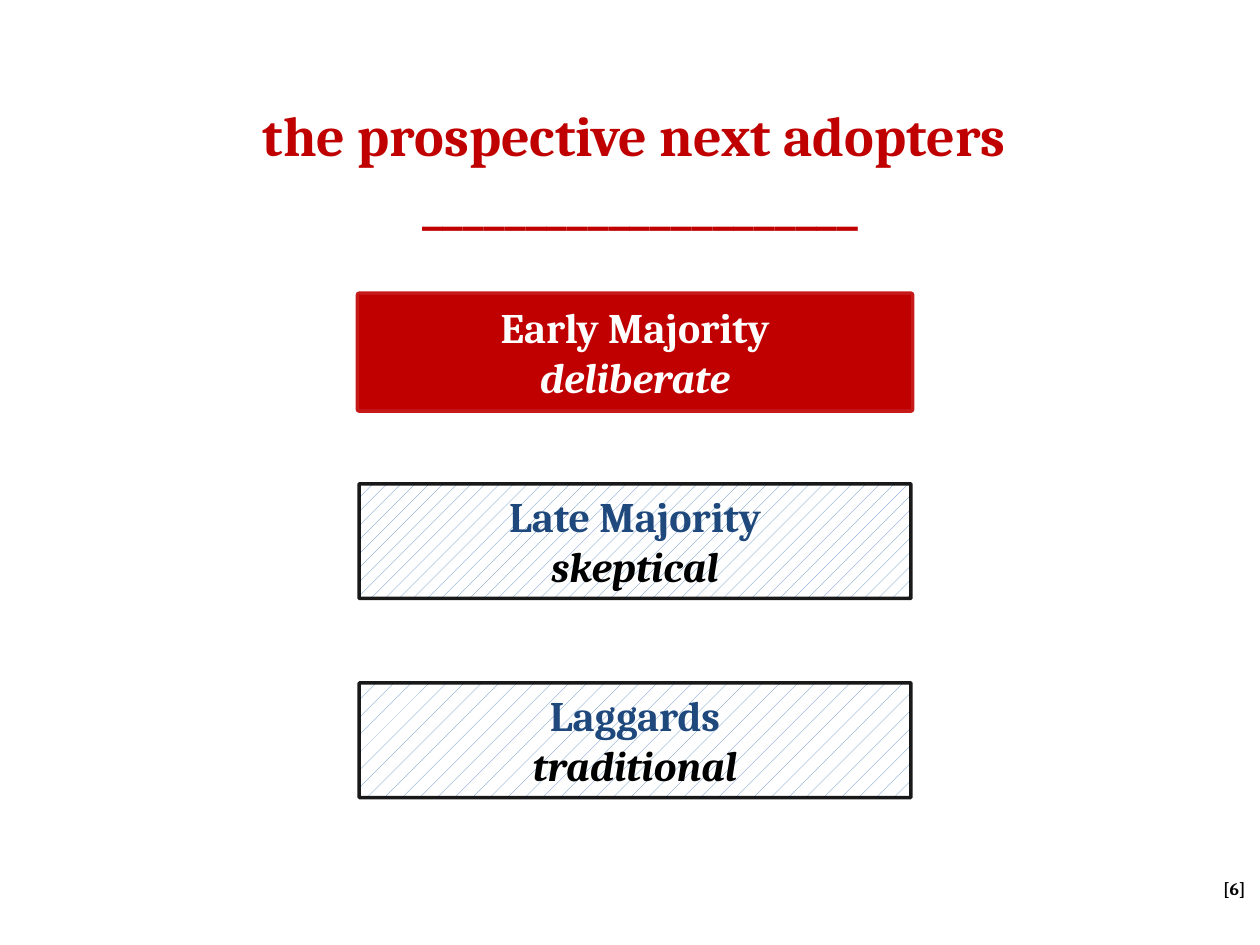
"""Build the slide that lists the prospective next adopter groups."""
import pptx
import pptx.dml.color
import pptx.enum.dml
import pptx.enum.shapes
import pptx.enum.text
import pptx.oxml
import pptx.oxml.ns
import pptx.util

WIDTH, HEIGHT = 10, 7.5
FONT = "Cambria"
RED, NAVY, BLUE, BLACK, WHITE = "C00000", "1F497D", "4F81BD", "000000", "FFFFFF"
BOX_LEFT, BOX_WIDTH, BOX_HEIGHT = 0.285 * WIDTH, 0.438 * WIDTH, 0.91
PATTERN = pptx.enum.dml.MSO_PATTERN
CENTER = pptx.enum.text.PP_ALIGN.CENTER
LEFT = pptx.enum.text.PP_ALIGN.LEFT


def color(value):
    """Return the colour for a hex string."""
    return pptx.dml.color.RGBColor.from_string(value)


def place(shape, left, top, width, height):
    """Set the position and size of a shape in inches."""
    shape.left, shape.top, shape.width, shape.height = (
        pptx.util.Inches(length) for length in (left, top, width, height))


def write_lines(shape, lines, size, alignment=CENTER, wrap=True):
    """Write bold lines, each given as text, colour and italic flag."""
    frame = shape.text_frame
    frame.word_wrap = wrap
    frame.auto_size = pptx.enum.text.MSO_AUTO_SIZE.SHAPE_TO_FIT_TEXT
    frame.vertical_anchor = pptx.enum.text.MSO_ANCHOR.TOP
    for index, (text, text_color, italic) in enumerate(lines):
        paragraph = frame.add_paragraph() if index else frame.paragraphs[0]
        paragraph.alignment = alignment
        run = paragraph.add_run()
        run.text = text
        run.font.name = FONT
        run.font.size = pptx.util.Pt(size)
        run.font.bold = True
        run.font.italic = italic
        run.font.color.rgb = color(text_color)


def fill_box(shape, fill_color, pattern):
    """Fill a shape with a plain colour, or with a pattern on white."""
    if pattern is None:
        shape.fill.solid()
        shape.fill.fore_color.rgb = color(fill_color)
    else:
        shape.fill.patterned()
        shape.fill.pattern = pattern
        shape.fill.fore_color.rgb = color(fill_color)
        shape.fill.back_color.rgb = color(WHITE)


def outline_box(shape, line_color, width):
    """Draw a slightly transparent outline around a shape."""
    shape.line.color.rgb = color(line_color)
    shape.line.width = pptx.util.Pt(width)
    line_fill = shape.line._get_or_add_ln().find(
        ".//" + pptx.oxml.ns.qn("a:srgbClr"))
    line_fill.append(pptx.oxml.parse_xml(
        f'<a:alpha {pptx.oxml.ns.nsdecls("a")} val="90000"/>'))


def add_adopter_box(slide, top, lines, fill_color, pattern, line_color, line_width):
    """Add the box of one adopter group."""
    box = slide.shapes.add_shape(
        pptx.enum.shapes.MSO_SHAPE.RECTANGLE, 0, 0, 0, 0)
    place(box, BOX_LEFT, top, BOX_WIDTH, BOX_HEIGHT)
    box.shadow.inherit = False
    fill_box(box, fill_color, pattern)
    outline_box(box, line_color, line_width)
    write_lines(box, lines, 24)


def add_title(slide):
    """Write the title and its rule into the title placeholder."""
    title = slide.shapes.title
    place(title, 1.46, 0.1 * HEIGHT, 7.15, 1.18)
    lines = [("the prospective next adopters", RED, False),
             (" " + "_" * 21, RED, False)]
    write_lines(title, lines, 32, wrap=False)


def add_page_number(slide):
    """Add the page number in the lower right corner."""
    number = slide.shapes.add_textbox(0, 0, 0, 0)
    place(number, WIDTH - 0.39, 6.92, 0.39, 0.27)
    write_lines(number, [("[6]", BLACK, False)], 10, LEFT, wrap=False)


def main():
    """Build and save the slide."""
    presentation = pptx.Presentation()
    presentation.slide_width = pptx.util.Inches(WIDTH)
    presentation.slide_height = pptx.util.Inches(HEIGHT)
    slide = presentation.slides.add_slide(presentation.slide_layouts[5])
    add_title(slide)
    groups = [
        (2.34, "Early Majority", "deliberate", WHITE, WHITE, RED, None, RED, 4),
        (3.84, "Late Majority", "skeptical", NAVY, BLACK, BLUE,
         PATTERN.PERCENT_10, BLACK, 2),
        (5.42, "Laggards", "traditional", NAVY, BLACK, BLUE,
         PATTERN.PERCENT_5, BLACK, 2),
    ]
    for top, name, trait, name_color, trait_color, *style in groups:
        lines = [(name, name_color, False), (trait, trait_color, True)]
        add_adopter_box(slide, top, lines, *style)
    add_page_number(slide)
    presentation.save("out.pptx")


if __name__ == "__main__":
    main()
